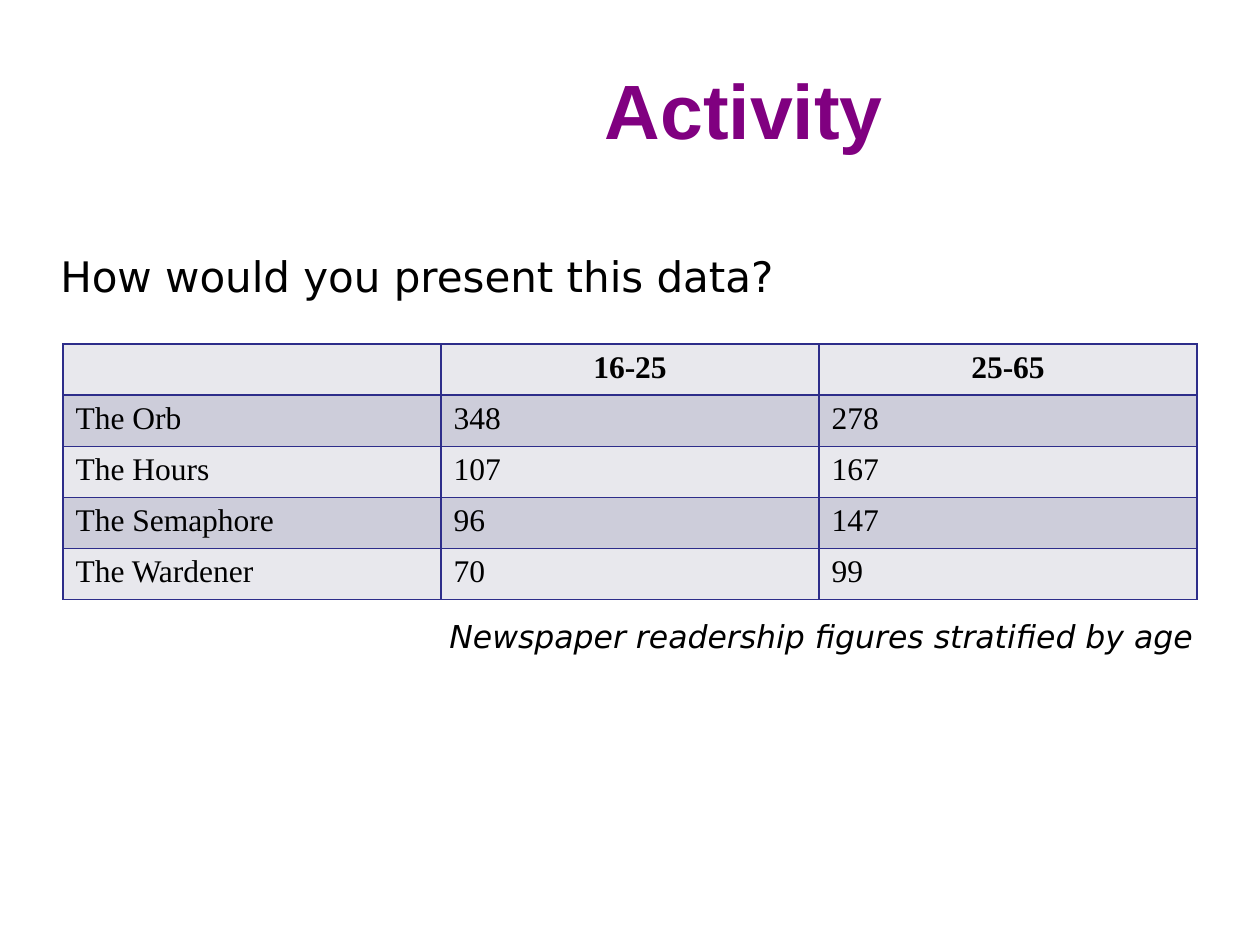
from lxml.etree import SubElement
from pptx import Presentation
from pptx.dml.color import RGBColor
from pptx.enum.text import MSO_ANCHOR, PP_ALIGN
from pptx.oxml.ns import qn
from pptx.util import Inches, Pt


def color(code):
    return RGBColor.from_string(code)


class Deck:
    sans, serif, head = "DejaVu Sans", "Times New Roman", "Arial"
    ink, accent, rule = "000000", "800080", "2D2D8A"
    bands = ("E8E8ED", "CDCDDA")

    def __init__(self):
        self.prs = Presentation()
        self.prs.slide_width, self.prs.slide_height = Inches(10), Inches(7.5)
        self.slide = self.prs.slides.add_slide(self.prs.slide_layouts[5])

    def style(self, frame, text, face, size, code, align=PP_ALIGN.LEFT,
              bold=False, italic=False):
        frame.text = text
        para = frame.paragraphs[0]
        para.alignment = align
        for run in para.runs:
            font = run.font
            font.name, font.size = face, Pt(size)
            font.bold, font.italic = bold, italic
            font.color.rgb = color(code)

    def title(self, text, x, y, w, h):
        shape = self.slide.shapes.title
        shape.left, shape.top = Inches(x), Inches(y)
        shape.width, shape.height = Inches(w), Inches(h)
        shape.text_frame.vertical_anchor = MSO_ANCHOR.MIDDLE
        self.style(shape.text_frame, text, self.head, 44, self.accent,
                   PP_ALIGN.CENTER, bold=True)

    def text(self, text, x, y, w, h, size, **look):
        box = self.slide.shapes.add_textbox(
            Inches(x), Inches(y), Inches(w), Inches(h))
        box.text_frame.word_wrap = True
        self.style(box.text_frame, text, self.sans, size, self.ink, **look)

    def border(self, cell):
        props = cell._tc.get_or_add_tcPr()
        for side in ("lnL", "lnR", "lnT", "lnB"):
            line = SubElement(props, qn(f"a:{side}"), w=str(Pt(1)))
            fill = SubElement(line, qn("a:solidFill"))
            SubElement(fill, qn("a:srgbClr"), val=self.rule)

    def table(self, rows, x, y, w, h):
        table = self.slide.shapes.add_table(
            len(rows), len(rows[0]), Inches(x), Inches(y),
            Inches(w), Inches(h)).table
        for r, row in enumerate(rows):
            top = r == 0
            for c, value in enumerate(row):
                cell = table.cell(r, c)
                # Borders must come before the fill in the cell properties
                self.border(cell)
                cell.fill.solid()
                cell.fill.fore_color.rgb = color(self.bands[r % 2])
                self.style(cell.text_frame, value, self.serif, 18, self.ink,
                           PP_ALIGN.CENTER if top else PP_ALIGN.LEFT, bold=top)


def main():
    deck = Deck()

    # Title and question
    deck.title("Activity", 2.4, 0.44, 7.01, 0.84)
    deck.text("How would you present this data?", 0.38, 1.94, 7.01, 0.5, 24)

    # Readership by age group
    deck.table([
        ("", "16-25", "25-65"),
        ("The Orb", "348", "278"),
        ("The Hours", "107", "167"),
        ("The Semaphore", "96", "147"),
        ("The Wardener", "70", "99"),
    ], 0.5, 2.73, 9, 2.03)

    # Caption
    deck.text("Newspaper readership figures stratified by age",
              3.19, 4.85, 6.38, 0.4, 18, align=PP_ALIGN.RIGHT, italic=True)

    deck.prs.save("out.pptx")


if __name__ == "__main__":
    main()
